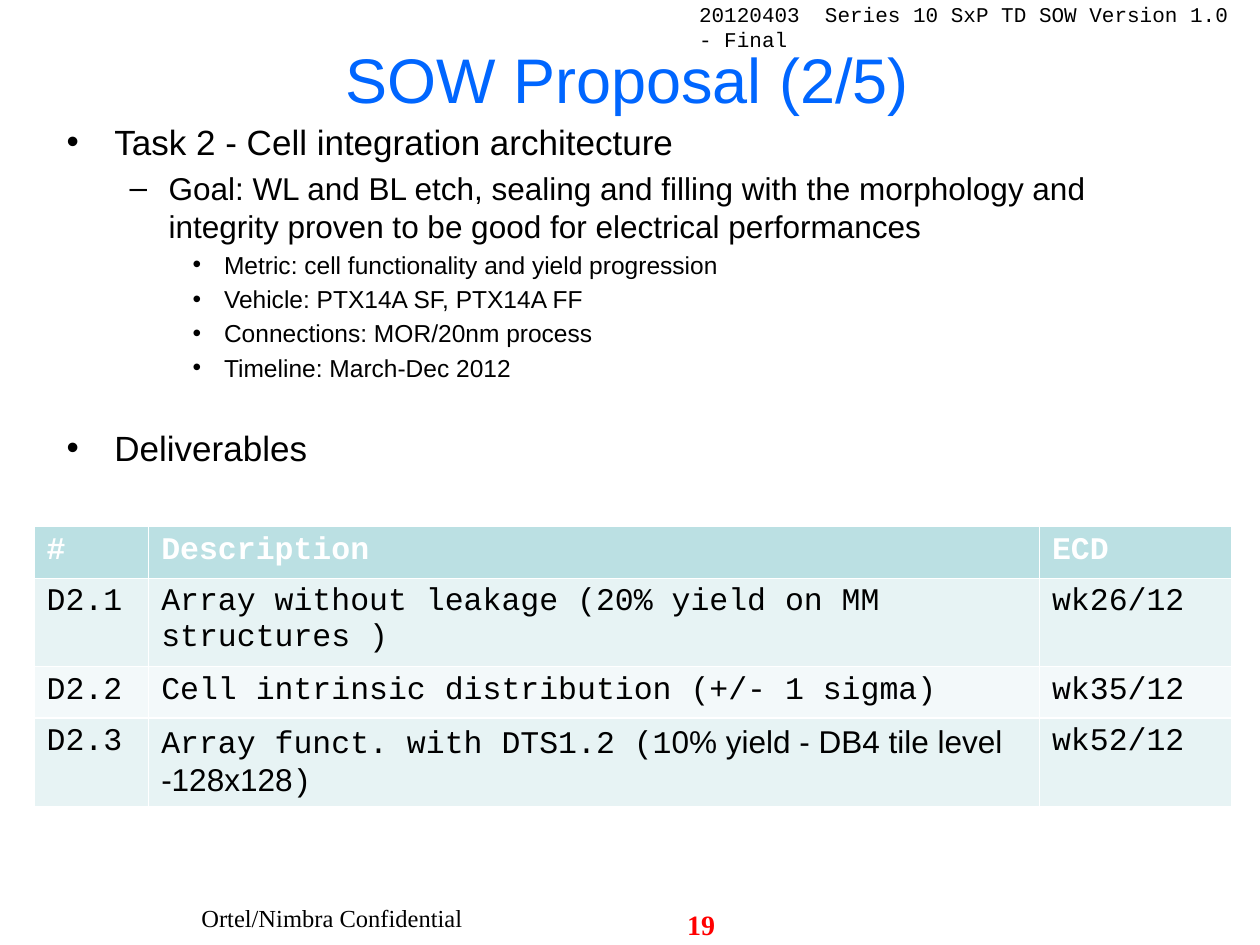
from pptx import Presentation
from pptx.dml.color import RGBColor
from pptx.enum.text import MSO_ANCHOR, PP_ALIGN
from pptx.oxml.ns import qn
from pptx.util import Inches, Pt
from lxml import etree

BLACK = RGBColor(0x00, 0x00, 0x00)
WHITE = RGBColor(0xFF, 0xFF, 0xFF)
BLUE = RGBColor(0x00, 0x66, 0xFF)
RED = RGBColor(0xFF, 0x00, 0x00)
TEAL = RGBColor(0xBB, 0xE0, 0xE3)
BANDS = [RGBColor(0xE7, 0xF3, 0xF4), RGBColor(0xF3, 0xF9, 0xFA)]
SANS, MONO, SERIF = "Arial", "Courier New", "Times New Roman"
LEFT, CENTER = PP_ALIGN.LEFT, PP_ALIGN.CENTER
MIDDLE = MSO_ANCHOR.MIDDLE

# Outline level: bullet, size, text indent, hanging indent
LEVELS = [("•", 20, 0.38, 0.38), ("–", 18, 0.81, 0.31), ("•", 14, 1.25, 0.25)]

# Level, text, extra gap above in points
TASKS = [
    (0, "Task 2 - Cell integration architecture", 0),
    (1, "Goal: WL and BL etch, sealing and filling with the morphology and "
        "integrity proven to be good for electrical performances", 0),
    (2, "Metric: cell functionality and yield progression", 0),
    (2, "Vehicle: PTX14A SF, PTX14A FF", 0),
    (2, "Connections: MOR/20nm process", 0),
    (2, "Timeline: March-Dec 2012", 0),
    (0, "Deliverables", 21.6),
]

# A cell is a list of (text, font) runs where fonts mix
GOALS = [
    ["#", "Description", "ECD"],
    ["D2.1", "Array without leakage (20% yield on MM structures )", "wk26/12"],
    ["D2.2", "Cell intrinsic distribution (+/- 1 sigma)", "wk35/12"],
    ["D2.3", [("Array funct. with DTS1.2 (1", MONO),
              ("0% yield - DB4 tile level -128x128", SANS),
              (")", MONO)], "wk52/12"],
]


def write(par, text, font=SANS, size=18, color=BLACK, bold=False, align=LEFT):
    par.alignment = align
    run = par.add_run()
    run.text = text
    run.font.name = font
    run.font.size = Pt(size)
    run.font.color.rgb = color
    run.font.bold = bold


class Deck:
    def __init__(self, width, height):
        self.prs = Presentation()
        self.prs.slide_width = Inches(width)
        self.prs.slide_height = Inches(height)
        self.slide = None

    def start(self):
        self.slide = self.prs.slides.add_slide(self.prs.slide_layouts[5])

    def title(self, text, box, **style):
        shape = self.slide.shapes.title
        shape.left, shape.top, shape.width, shape.height = map(Inches, box)
        shape.text_frame.vertical_anchor = MIDDLE
        write(shape.text_frame.paragraphs[0], text, align=CENTER, **style)

    def frame(self, box):
        frame = self.slide.shapes.add_textbox(*map(Inches, box)).text_frame
        frame.word_wrap = True
        return frame

    def label(self, text, box, **style):
        write(self.frame(box).paragraphs[0], text, **style)

    def outline(self, items, box):
        frame = self.frame(box)
        for i, (level, text, gap) in enumerate(items):
            par = frame.add_paragraph() if i else frame.paragraphs[0]
            mark, size, indent, hang = LEVELS[level]
            par.level = level
            props = par._p.get_or_add_pPr()
            props.set("marL", str(Inches(indent)))
            props.set("indent", str(-Inches(hang)))
            etree.SubElement(props, qn("a:buFont"), typeface=SANS)
            etree.SubElement(props, qn("a:buChar"), char=mark)
            if i:
                par.space_before = Pt(size * 0.2 + gap)
            write(par, text, size=size)

    def table(self, rows, box, widths):
        grid = self.slide.shapes.add_table(
            len(rows), len(widths), *map(Inches, box)).table
        for col, width in zip(grid.columns, widths):
            col.width = Inches(width)
        for r, row in enumerate(rows):
            head = r == 0
            for c, text in enumerate(row):
                cell = grid.cell(r, c)
                cell.fill.solid()
                cell.fill.fore_color.rgb = TEAL if head else BANDS[(r - 1) % 2]
                runs = [(text, MONO)] if isinstance(text, str) else text
                for part, font in runs:
                    write(cell.text_frame.paragraphs[0], part, font=font,
                          color=WHITE if head else BLACK, bold=head)

    def save(self):
        self.prs.save("out.pptx")


def main():
    deck = Deck(10, 7.5)
    deck.start()

    # Header and title
    deck.label("20120403\u00a0 Series 10 SxP TD SOW Version 1.0 - Final".replace("\u00a0", " "),
               (5.45, -0.04, 4.53, 0.3), font=MONO, size=12)
    deck.title("SOW Proposal (2/5)", (0.48, 0, 9, 1.25), size=36, color=BLUE)

    # Task outline
    deck.outline(TASKS, (0.43, 0.91, 9, 2.88))

    # Deliverables table
    deck.table(GOALS, (0.27, 4.18, 9.51, 1.64), (0.91, 7.07, 1.53))

    # Footer and page number
    deck.label("Ortel/Nimbra Confidential", (1.5, 7.12, 2.33, 0.38),
               font=SERIF, size=14)
    deck.label("19", (3.98, 7.15, 3.17, 0.35), font=SERIF, size=16,
               color=RED, bold=True, align=CENTER)

    deck.save()


if __name__ == "__main__":
    main()
